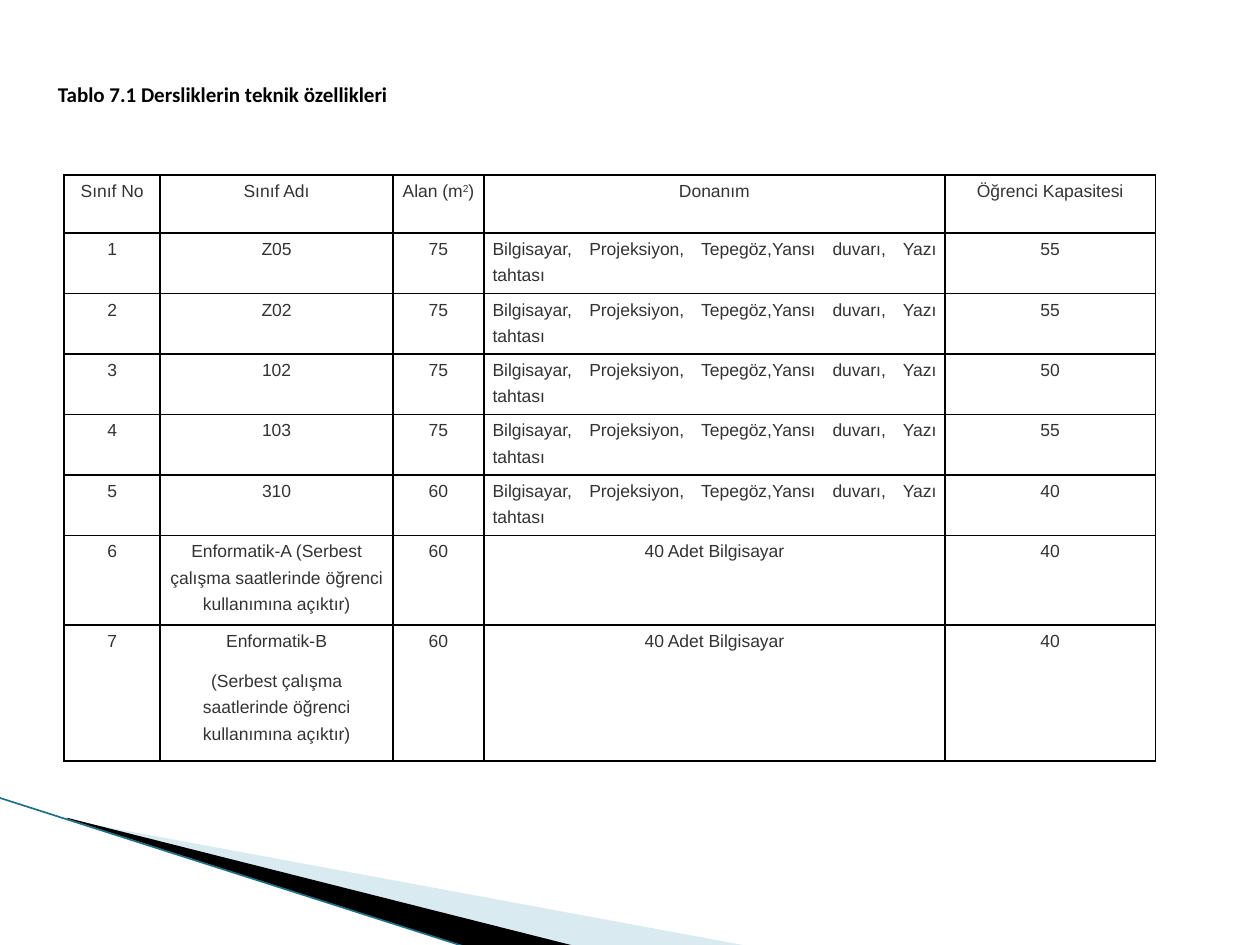
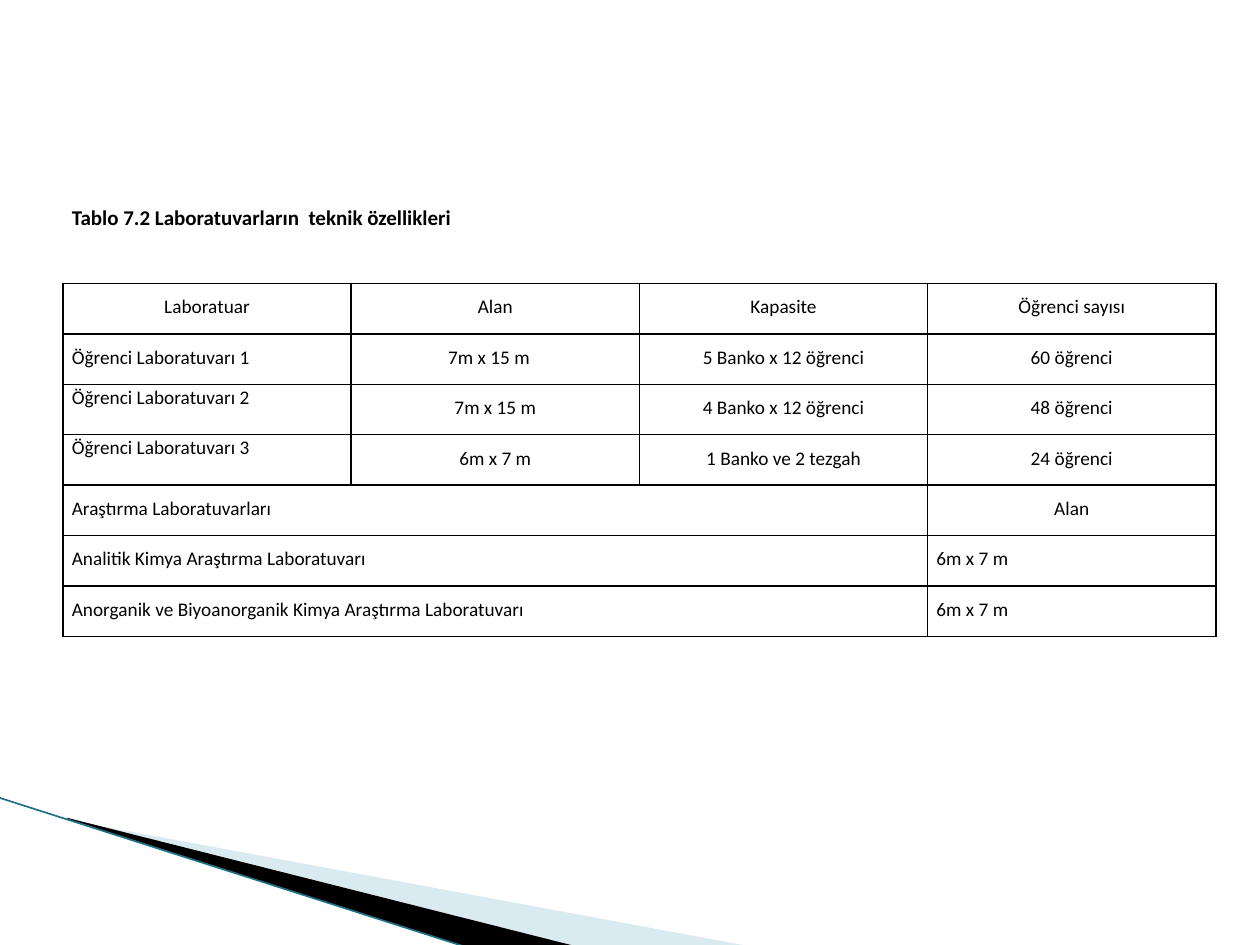
"""Build two slides listing the technical features of classrooms and laboratories."""
from dataclasses import dataclass

from lxml.etree import SubElement
from pptx import Presentation
from pptx.dml.color import RGBColor
from pptx.enum.shapes import MSO_CONNECTOR
from pptx.enum.text import MSO_ANCHOR, MSO_AUTO_SIZE, PP_ALIGN
from pptx.oxml import parse_xml
from pptx.oxml.ns import nsdecls, qn
from pptx.util import Inches, Pt


@dataclass(frozen=True)
class Theme:
    black: str = "000000"
    grey: str = "333333"
    pale_blue: str = "A0CBDC"
    teal: str = "1F7086"
    caption_font: str = "Calibri"
    room_font: str = "Arial"
    caption_size: int = 12
    room_size: int = 10
    lab_size: int = 11


theme = Theme()


def add_caption(slide, text, left, top, width, height):
    caption = slide.shapes.title
    caption.left, caption.top = Inches(left), Inches(top)
    caption.width, caption.height = Inches(width), Inches(height)
    frame = caption.text_frame
    frame.text = text
    frame.word_wrap = True
    frame.auto_size = MSO_AUTO_SIZE.NONE
    frame.margin_top = frame.margin_bottom = 0
    frame.paragraphs[0].alignment = PP_ALIGN.LEFT
    font = frame.paragraphs[0].runs[0].font
    font.name, font.size, font.bold = theme.caption_font, Pt(theme.caption_size), True
    font.color.rgb = RGBColor.from_string(theme.black)
    return frame


def add_grid(slide, left, top, widths, heights, rows, font_name, size, color, spacing):
    table = slide.shapes.add_table(len(rows), len(widths), Inches(left), Inches(top),
                                   Inches(sum(widths)), Inches(sum(heights))).table
    table.first_row = table.horz_banding = False
    for column, width in zip(table.columns, widths):
        column.width = Inches(width)
    for row, height, texts in zip(table.rows, heights, rows):
        row.height = Inches(height)
        for cell, text in zip(row.cells, texts):
            cell.margin_left = cell.margin_right = Inches(0.07)
            cell.margin_top = cell.margin_bottom = 0
            cell.fill.background()
            borders = cell._tc.get_or_add_tcPr()
            for index, side in enumerate("LRTB"):
                borders.insert(index, parse_xml(
                    f'<a:ln{side} {nsdecls("a")} w="12700"><a:solidFill>'
                    f'<a:srgbClr val="{theme.black}"/></a:solidFill></a:ln{side}>'))
            cell.text_frame.text = text.replace("^", "")
            for paragraph, line in zip(cell.text_frame.paragraphs, text.split("\n")):
                paragraph.alignment = PP_ALIGN.CENTER
                paragraph.line_spacing = spacing
                paragraph.space_after = Pt(8)
                if "^" in line:
                    paragraph.clear()
                    for index, piece in enumerate(line.split("^")):
                        run = paragraph.add_run()
                        run.text = piece
                        if index % 2:
                            run._r.get_or_add_rPr().set("baseline", "30000")
                for run in paragraph.runs:
                    run.font.name, run.font.size = font_name, Pt(size)
                    run.font.color.rgb = RGBColor.from_string(color)
    return table


prs = Presentation()
prs.slide_width, prs.slide_height = Inches(10), Inches(7.5)
title_only = prs.slide_layouts[5]
classrooms = prs.slides.add_slide(title_only)
laboratories = prs.slides.add_slide(title_only)

wedges = [
    ([(0.55, 6.51), (5.95, 7.51), (4.56, 7.51), (0.55, 6.5)], theme.pale_blue, 40),
    ([(0.53, 6.49), (4.57, 7.51), (3.72, 7.52), (0.54, 6.5)], theme.black, 100),
]
corner = []
for points, color, opacity in wedges:
    corners = [(Inches(x), Inches(y)) for x, y in points]
    outline = classrooms.shapes.build_freeform(*corners[0], scale=1.0)
    outline.add_line_segments(corners[1:], close=True)
    wedge = outline.convert_to_shape()
    wedge.shadow.inherit = False
    wedge.line.fill.background()
    wedge.fill.solid()
    wedge.fill.fore_color.rgb = RGBColor.from_string(color)
    if opacity < 100:
        tint = wedge.element.find(".//" + qn("a:srgbClr"))
        SubElement(tint, qn("a:alpha")).set("val", str(opacity * 1000))
    corner.append(wedge)
edge = classrooms.shapes.add_connector(MSO_CONNECTOR.STRAIGHT, Inches(-0.01), Inches(6.33),
                                       Inches(3.71), Inches(7.52))
edge.line.color.rgb = RGBColor.from_string(theme.teal)
edge.line.width = Pt(0.95)
SubElement(edge.element.spPr, qn("a:effectLst"))
corner.append(edge)
master_tree = prs.slide_master.shapes.element
for position, part in enumerate(corner, start=2):
    master_tree.insert(position, part.element)

add_caption(classrooms, "Tablo 7.1 Dersliklerin teknik özellikleri", 0.36, 0.6, 8.98, 0.3)
equipment = "Bilgisayar, Projeksiyon, Tepegöz,Yansı duvarı, Yazı tahtası"
computers = "40 Adet Bilgisayar"
open_hours = "(Serbest çalışma saatlerinde öğrenci kullanımına açıktır)"
rooms = [
    ("Sınıf No", "Sınıf Adı", "Alan (m^2^)", "Donanım", "Öğrenci Kapasitesi"),
    ("1", "Z05", "75", equipment, "55"),
    ("2", "Z02", "75", equipment, "55"),
    ("3", "102", "75", equipment, "50"),
    ("4", "103", "75", equipment, "55"),
    ("5", "310", "60", equipment, "40"),
    ("6", f"Enformatik-A {open_hours}", "60", computers, "40"),
    ("7", f"Enformatik-B\n{open_hours}", "60", computers, "40"),
]
room_grid = add_grid(classrooms, 0.51, 1.39, [0.76, 1.85, 0.72, 3.66, 1.67],
                     [0.46] + [0.48] * 5 + [0.71, 1.08], rooms,
                     theme.room_font, theme.room_size, theme.grey, Pt(15))
for row in range(1, 6):
    room_grid.cell(row, 3).text_frame.paragraphs[0].alignment = PP_ALIGN.JUSTIFY

lab_caption = add_caption(laboratories, "Tablo 7.2 Laboratuvarların  teknik özellikleri",
                          0.47, 1.62, 9.53, 0.5)
lab_caption.vertical_anchor = MSO_ANCHOR.TOP
labs = [
    ("Laboratuar", "Alan", "Kapasite", "Öğrenci sayısı"),
    ("Öğrenci Laboratuvarı 1", "7m x 15 m", "5 Banko x 12 öğrenci", "60 öğrenci"),
    ("Öğrenci Laboratuvarı 2", "7m x 15 m", "4 Banko x 12 öğrenci", "48 öğrenci"),
    ("Öğrenci Laboratuvarı 3", "6m x 7 m", "1 Banko ve 2 tezgah", "24 öğrenci"),
    ("Araştırma Laboratuvarları", "", "", "Alan"),
    ("Analitik Kimya Araştırma Laboratuvarı", "", "", "6m x 7 m"),
    ("Anorganik ve Biyoanorganik Kimya Araştırma Laboratuvarı", "", "", "6m x 7 m"),
]
lab_grid = add_grid(laboratories, 0.5, 2.25, [9.15 / 4] * 4, [0.4] * len(labs), labs,
                    theme.caption_font, theme.lab_size, theme.black, 1.5)
for row in range(1, len(labs)):
    name = lab_grid.cell(row, 0).text_frame.paragraphs[0]
    name.alignment = PP_ALIGN.LEFT
    if row in (2, 3):
        name.line_spacing = 1.07
    if row >= 4:
        lab_grid.cell(row, 0).merge(lab_grid.cell(row, 2))
    if row >= 5:
        for column in (0, 3):
            lab_grid.cell(row, column).text_frame.paragraphs[0].alignment = PP_ALIGN.JUSTIFY
lab_grid.cell(1, 1).margin_right = Inches(0.17)

prs.save("out.pptx")
